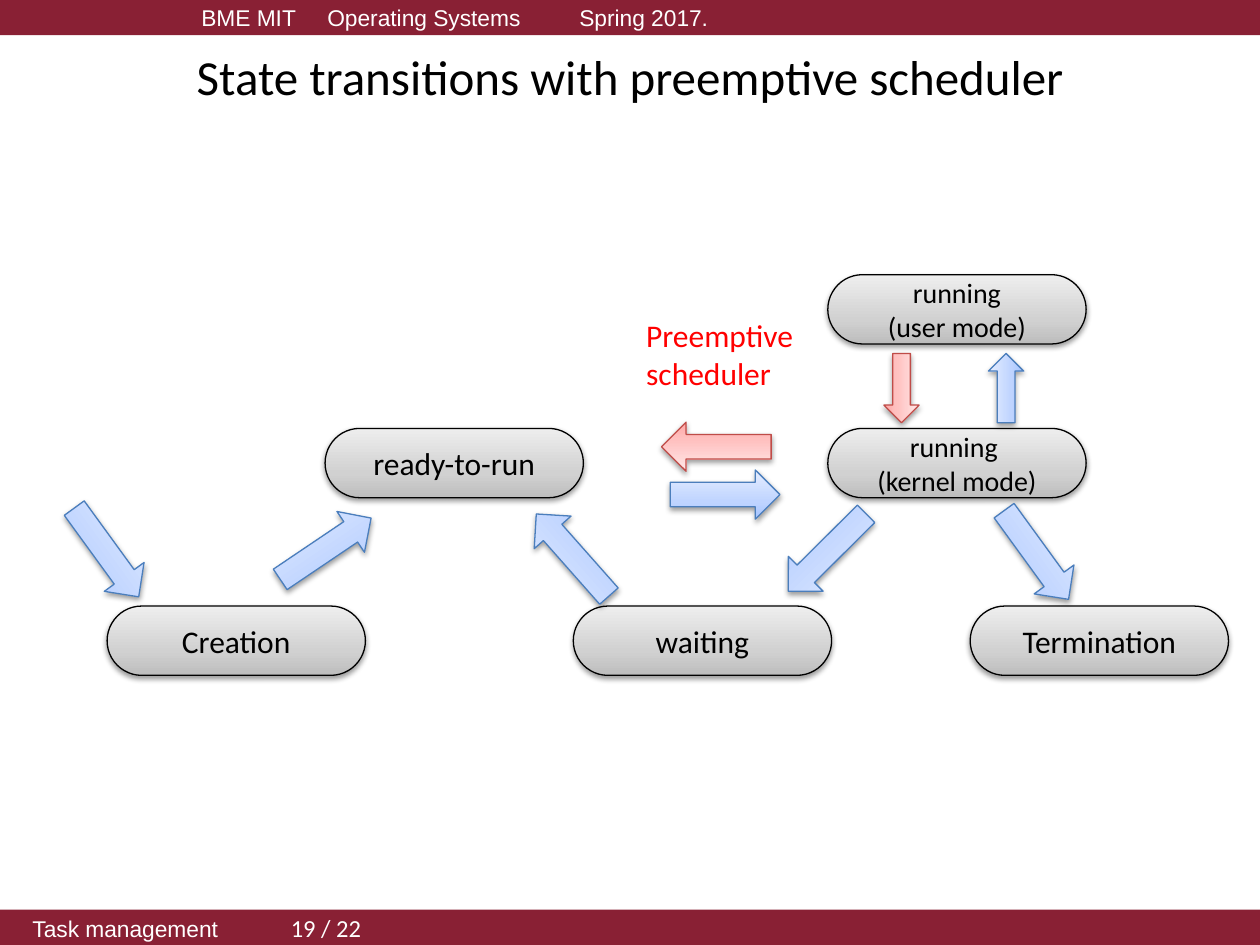
import pptx
import pptx.dml.color
import pptx.enum.shapes
import pptx.enum.text
import pptx.oxml
import pptx.oxml.ns
import pptx.util

Inches = pptx.util.Inches
SHAPE = pptx.enum.shapes.MSO_SHAPE
ALIGN = pptx.enum.text.PP_ALIGN
MIDDLE = pptx.enum.text.MSO_ANCHOR.MIDDLE
rgb = pptx.dml.color.RGBColor.from_string
NS = pptx.oxml.ns.nsdecls("a")

GREY = (("BDBDBD", "D1D1D1", "EEEEEE"), "000000")
BLUE = (("A4C4FF", "BFD4FF", "E6EEFF"), "4B7EBC")
RED = (("FFA6A5", "FFC0BF", "FFE7E7"), "BF4C48")


def add_run(p, text, size, color="000000", name="Calibri"):
    r = p.add_run()
    r.text = text
    for key, value in {"size": pptx.util.Pt(size), "name": name}.items():
        setattr(r.font, key, value)
    r.font.color.rgb = rgb(color)


def style(sp, palette):
    """Give a shape an upward three-stop gradient, a thin outline and a soft shadow."""
    colors, line = palette
    sp.fill.gradient()
    sp.fill.gradient_angle = 90
    stops = "".join(
        f'<a:gs pos="{pos}"><a:srgbClr val="{c}"/></a:gs>'
        for pos, c in zip((0, 35000, 100000), colors))
    old = sp._element.spPr.find(".//" + pptx.oxml.ns.qn("a:gsLst"))
    old.getparent().replace(old, pptx.oxml.parse_xml(f"<a:gsLst {NS}>{stops}</a:gsLst>"))
    sp.line.color.rgb = rgb(line)
    sp.line.width = pptx.util.Pt(0.75)
    sp.shadow.inherit = False
    effects = sp._element.spPr.find(pptx.oxml.ns.qn("a:effectLst"))
    effects.append(pptx.oxml.parse_xml(
        f'<a:outerShdw {NS} blurRad="40000" dist="20000" dir="5400000" rotWithShape="0">'
        '<a:srgbClr val="000000"><a:alpha val="38000"/></a:srgbClr></a:outerShdw>'))


prs = pptx.Presentation()
prs.slide_width, prs.slide_height = Inches(10), Inches(7.5)
s = prs.slides.add_slide(prs.slide_layouts[6])

# Header and footer bands
bands = [
    (0, 1.5, [("BME MIT\tOperating Systems\tSpring 2017.", 13, "Arial")]),
    (7.22, 0.16, [("Task management\t\t ", 13, "Arial"), ("19 / 22", 14, "Calibri")]),
]
for top, indent, runs in bands:
    sp = s.shapes.add_shape(SHAPE.RECTANGLE, 0, Inches(top), Inches(10), Inches(0.28))
    sp.shadow.inherit = False
    sp.fill.solid()
    sp.fill.fore_color.rgb = rgb("892034")
    sp.line.fill.background()
    sp.text_frame.vertical_anchor = MIDDLE
    p = sp.text_frame.paragraphs[0]
    p.alignment = ALIGN.LEFT
    p._p.get_or_add_pPr().set("marL", str(Inches(indent)))
    for text, size, name in runs:
        add_run(p, text, size, "FFFFFF", name)

# Title
tf = s.shapes.add_textbox(Inches(0.5), Inches(0.3), Inches(9), Inches(0.61)).text_frame
tf.word_wrap = True
tf.vertical_anchor = MIDDLE
tf.paragraphs[0].alignment = ALIGN.CENTER
add_run(tf.paragraphs[0], "State transitions with preemptive scheduler", 28)

# Task states
states = [
    (0.85, 4.81, ["Creation"]),
    (2.58, 3.4, ["ready-to-run"]),
    (4.55, 4.81, ["waiting"]),
    (6.57, 3.4, ["running ", "(kernel mode)"]),
    (7.7, 4.81, ["Termination"]),
    (6.57, 2.18, ["running", "(user mode)"]),
]
for left, top, lines in states:
    sp = s.shapes.add_shape(SHAPE.ROUNDED_RECTANGLE, Inches(left), Inches(top),
                            Inches(2.05), Inches(0.55))
    sp.adjustments[0] = 0.5
    style(sp, GREY)
    tf = sp.text_frame
    tf.vertical_anchor = MIDDLE
    for i, line in enumerate(lines):
        p = tf.add_paragraph() if i else tf.paragraphs[0]
        p.alignment = ALIGN.CENTER
        add_run(p, line, 18 if len(lines) == 1 else 16)

# Transitions: left, top, rotation, palette
LARGE, SMALL = (0.87, 0.39), (0.55, 0.28)
arrows = [
    (2.15, 4.16, LARGE, 326, BLUE),
    (5.32, 3.73, LARGE, 0, BLUE),
    (7.79, 4.21, LARGE, 54, BLUE),
    (6.13, 4.19, LARGE, 135.2, BLUE),
    (4.11, 4.21, LARGE, 228.5, BLUE),
    (7.71, 2.94, SMALL, 270, BLUE),
    (6.88, 2.94, SMALL, 90, RED),
    (0.41, 4.19, LARGE, 54, BLUE),
    (5.25, 3.35, LARGE, 180, RED),
]
for left, top, (width, height), rotation, palette in arrows:
    sp = s.shapes.add_shape(SHAPE.RIGHT_ARROW, Inches(left), Inches(top),
                            Inches(width), Inches(height))
    sp.rotation = rotation
    style(sp, palette)

# Label of the preemptive transition
tf = s.shapes.add_textbox(Inches(5.03), Inches(2.46), Inches(1.39), Inches(0.71)).text_frame
tf.word_wrap = False
tf.auto_size = pptx.enum.text.MSO_AUTO_SIZE.SHAPE_TO_FIT_TEXT
add_run(tf.paragraphs[0], "Preemptive", 18, "FF0000")
add_run(tf.add_paragraph(), "scheduler", 18, "FF0000")

prs.save("out.pptx")
